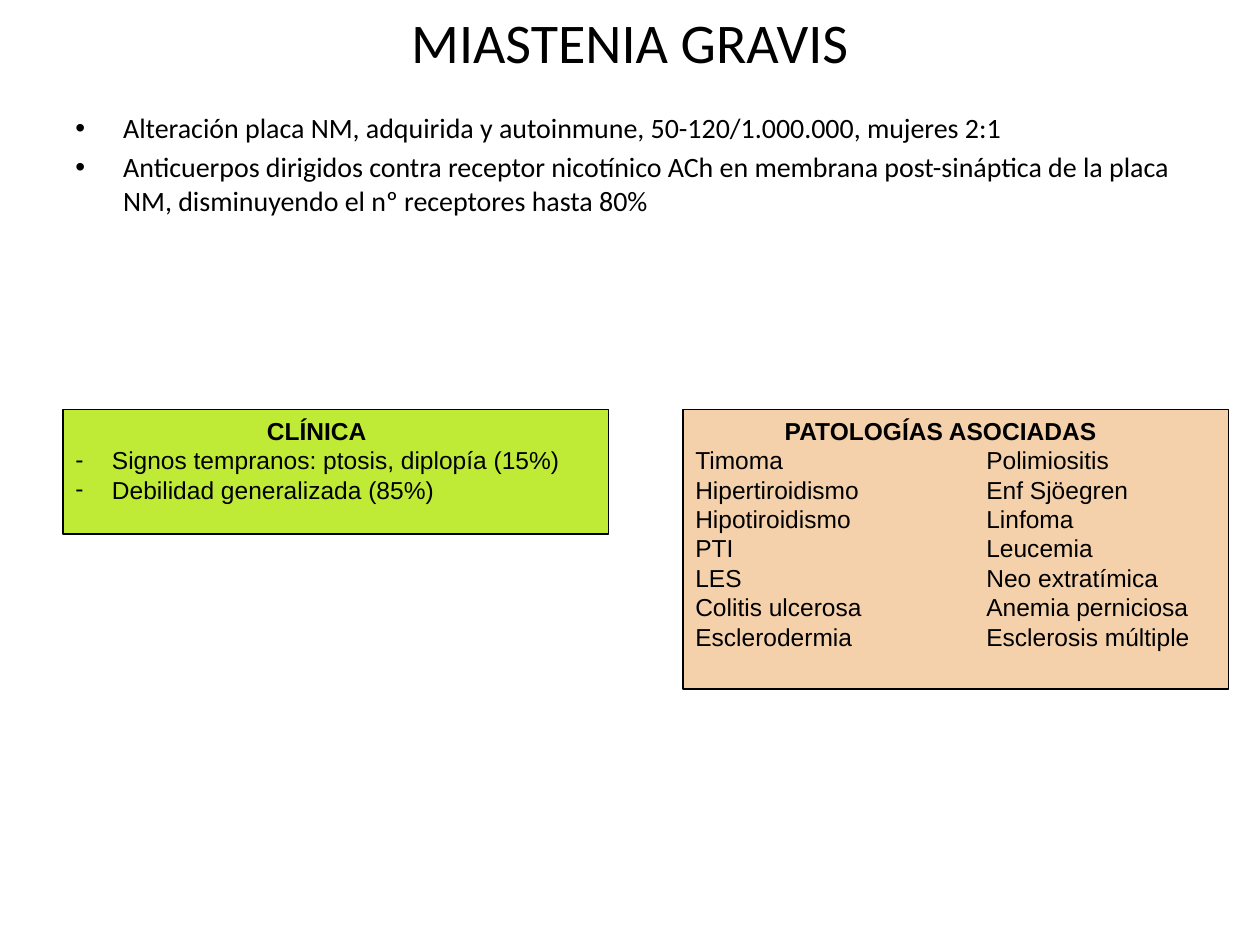
from pptx import Presentation
from pptx.dml.color import RGBColor
from pptx.enum.shapes import MSO_SHAPE
from pptx.enum.text import MSO_ANCHOR, PP_ALIGN
from pptx.oxml.ns import qn
from pptx.util import Inches, Pt
from lxml.etree import SubElement

COLORS = {"text": "000000", "clinical": "BFEA36", "associated": "F4D1AA"}


def add_line(tf, text, font, size, bold=False, indent=0, bullet=None):
    """Fill the first paragraph if it is empty, otherwise add one."""
    p = tf.paragraphs[0] if not tf.text else tf.add_paragraph()
    p.text = text
    r = p.runs[0]
    r.font.name, r.font.size, r.font.bold = font, Pt(size), bold
    r.font.color.rgb = RGBColor.from_string(COLORS["text"])
    pPr = p._p.get_or_add_pPr()
    pPr.set("marL", str(Inches(indent)))
    if bullet:
        pPr.set("indent", str(-Inches(indent)))
        SubElement(pPr, qn("a:buFont"), typeface="Arial")
        SubElement(pPr, qn("a:buChar"), char=bullet)
    return p


def add_box(left, height, color, heading, heading_indent):
    """Outlined box with a bold heading; returns its text frame."""
    sp = s.shapes.add_shape(MSO_SHAPE.RECTANGLE, Inches(left), Inches(3.25),
                            Inches(4.33), Inches(height))
    sp.shadow.inherit = False
    sp.fill.solid()
    sp.fill.fore_color.rgb = RGBColor.from_string(COLORS[color])
    sp.line.color.rgb = RGBColor.from_string(COLORS["text"])
    sp.line.width = Pt(1)
    tf = sp.text_frame
    tf.word_wrap = True
    tf.vertical_anchor = MSO_ANCHOR.TOP
    p = add_line(tf, heading, "Arial", 14, bold=True, indent=heading_indent)
    p.alignment = PP_ALIGN.LEFT
    return tf


prs = Presentation()
prs.slide_width, prs.slide_height = Inches(10), Inches(7.5)
s = prs.slides.add_slide(prs.slide_layouts[6])

# Title
tf = s.shapes.add_textbox(Inches(0.5), Inches(0.08), Inches(9), Inches(0.5)).text_frame
tf.word_wrap = True
tf.vertical_anchor = MSO_ANCHOR.MIDDLE
add_line(tf, "MIASTENIA GRAVIS", "Calibri", 32).alignment = PP_ALIGN.CENTER

# Introductory bullets
tf = s.shapes.add_textbox(Inches(0.5), Inches(0.83), Inches(9), Inches(1.75)).text_frame
tf.word_wrap = True
for text in (
    "Alteración placa NM, adquirida y autoinmune, 50-120/1.000.000, mujeres 2:1",
    "Anticuerpos dirigidos contra receptor nicotínico ACh en membrana post-sináptica "
    "de la placa NM, disminuyendo el nº receptores hasta 80%",
):
    p = add_line(tf, text, "Calibri", 16, indent=0.38, bullet="•")
    p.space_before = Pt(3.2)

# Clinical signs
tf = add_box(0.5, 0.99, "clinical", "CLÍNICA", 1.52)
for text in ("Signos tempranos: ptosis, diplopía (15%)", "Debilidad generalizada (85%)"):
    p = add_line(tf, text, "Arial", 14, indent=0.29, bullet="-")
    p.alignment = PP_ALIGN.LEFT

# Associated conditions, two columns set with a tab stop
tf = add_box(5.42, 2.22, "associated", "PATOLOGÍAS ASOCIADAS", 0.71)
for pair in (
    ("Timoma", "Polimiositis"),
    ("Hipertiroidismo", "Enf Sjöegren"),
    ("Hipotiroidismo", "Linfoma"),
    ("PTI", "Leucemia"),
    ("LES", "Neo extratímica"),
    ("Colitis ulcerosa", "Anemia perniciosa"),
    ("Esclerodermia", "Esclerosis múltiple"),
):
    p = add_line(tf, "\t".join(pair), "Arial", 14)
    p.alignment = PP_ALIGN.LEFT
    tabs = SubElement(p._p.get_or_add_pPr(), qn("a:tabLst"))
    SubElement(tabs, qn("a:tab"), pos=str(Inches(2.31)), algn="l")

prs.save("out.pptx")
